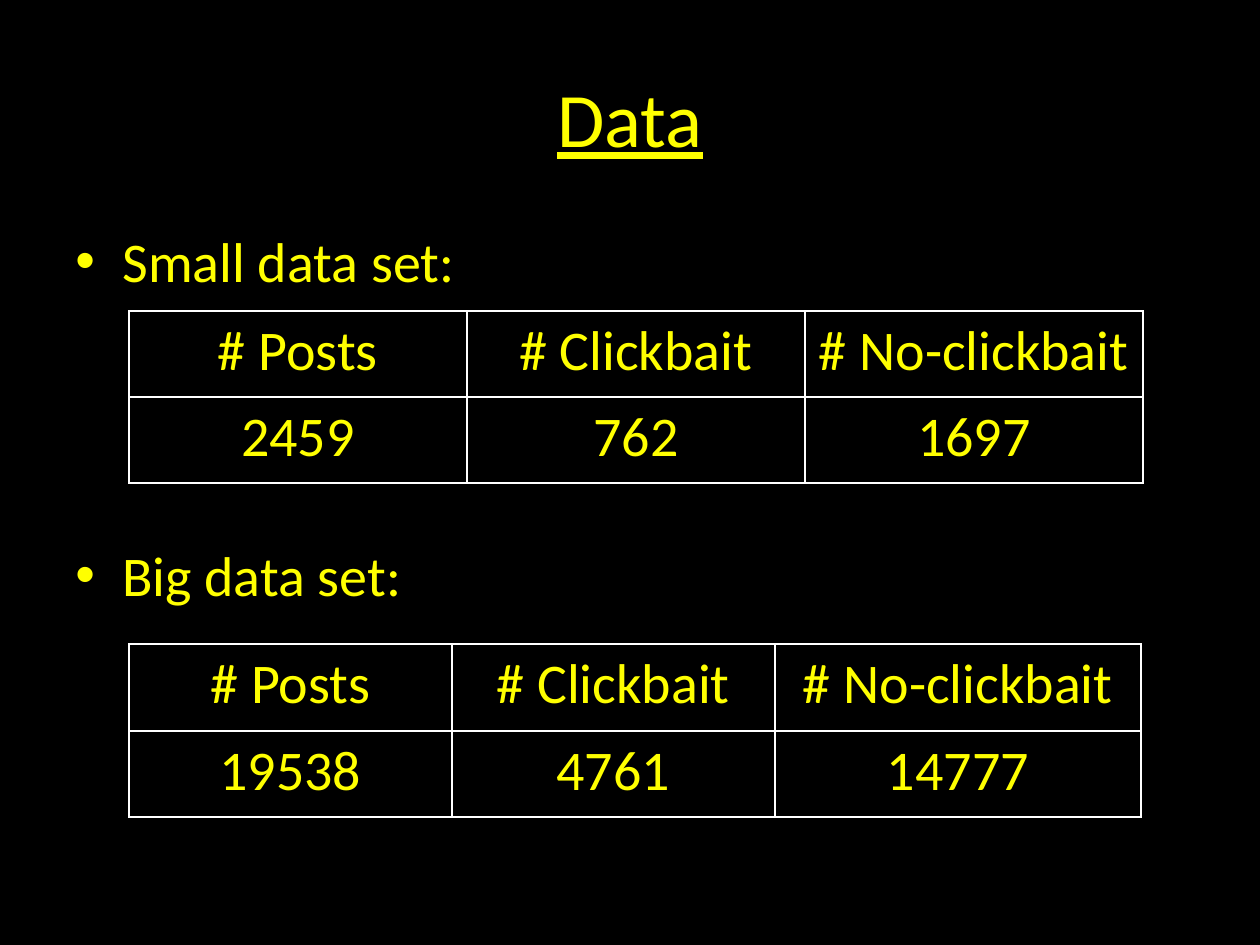
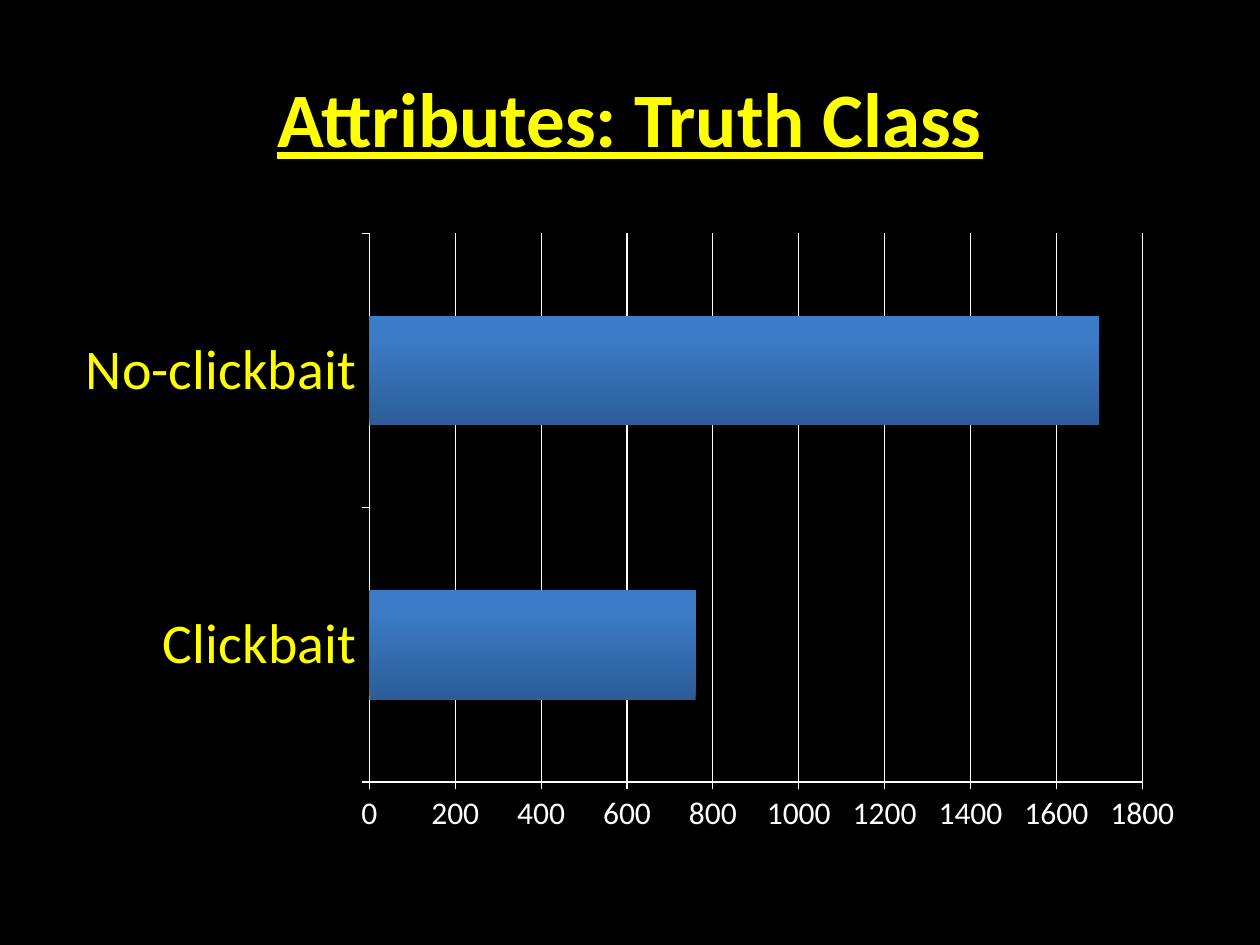
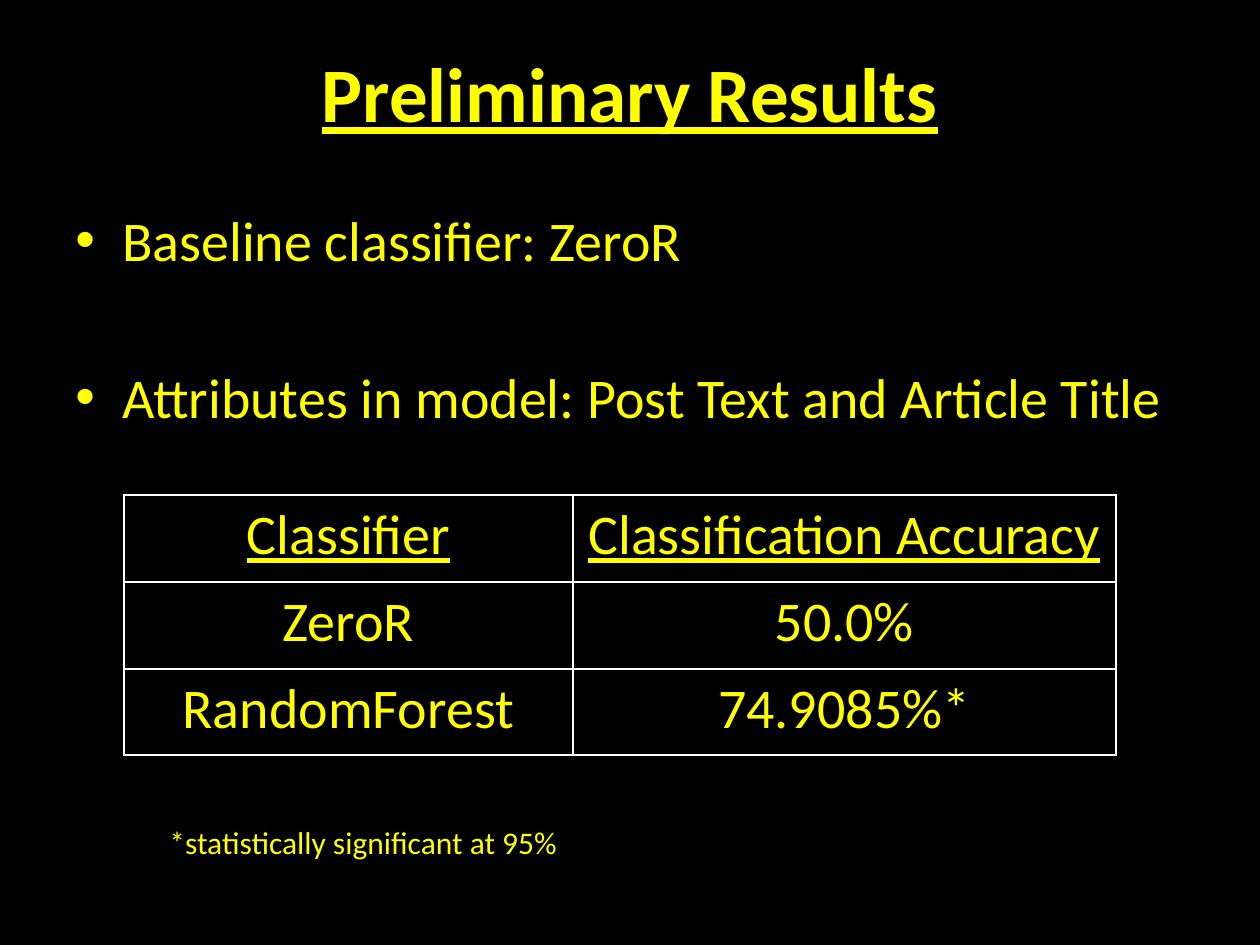
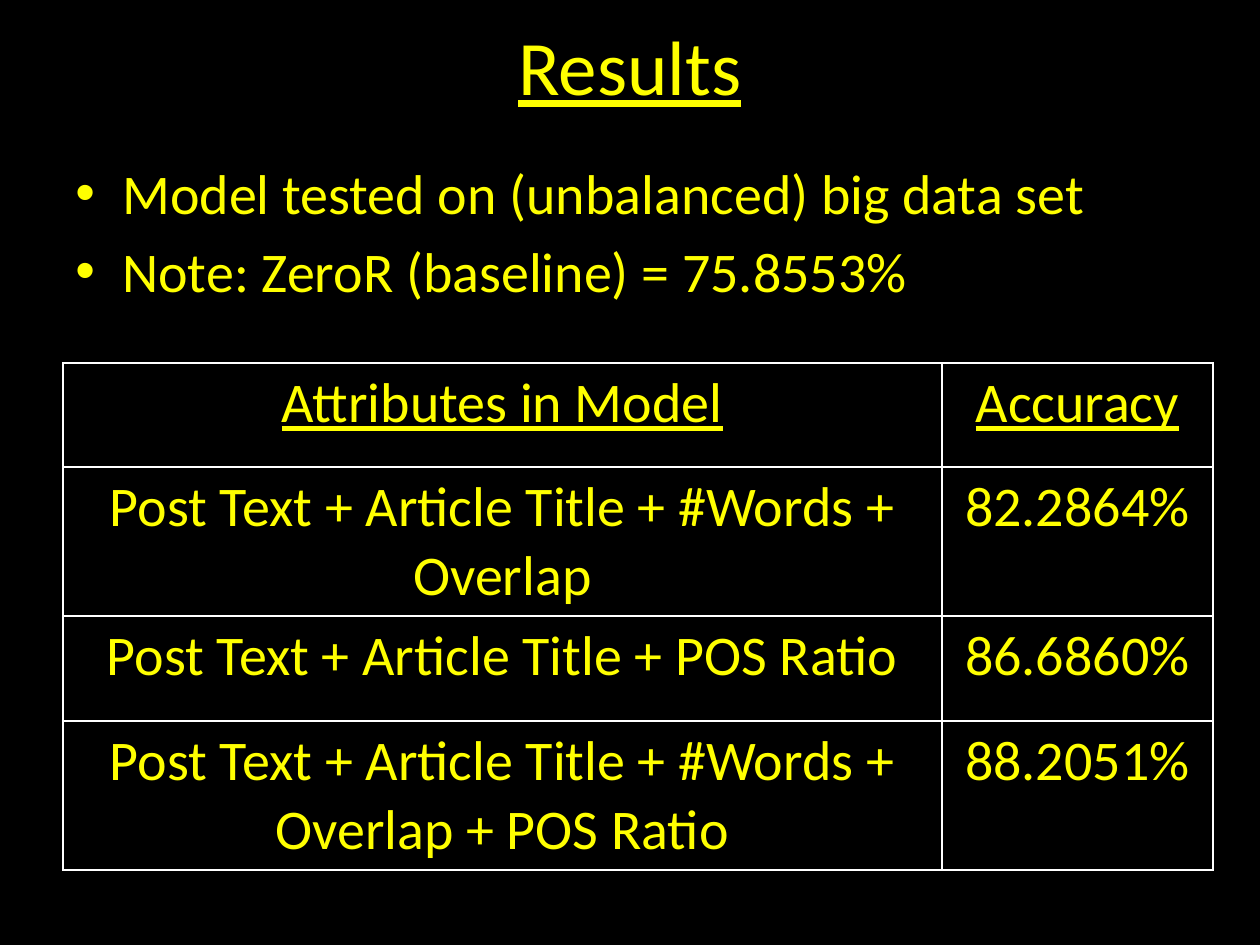
from lxml.etree import SubElement
from pptx import Presentation
from pptx.chart.data import CategoryChartData
from pptx.dml.color import RGBColor
from pptx.enum.chart import XL_CHART_TYPE, XL_TICK_MARK
from pptx.enum.text import MSO_ANCHOR, PP_ALIGN
from pptx.oxml import parse_xml
from pptx.oxml.ns import nsdecls, qn
from pptx.util import Emu, Pt

BLACK = RGBColor(0x00, 0x00, 0x00)
WHITE = RGBColor(0xFF, 0xFF, 0xFF)
YELLOW = RGBColor(0xFF, 0xFF, 0x00)
BAR_DARK = RGBColor(0x2C, 0x5D, 0x98)
BAR_LIGHT = RGBColor(0x3C, 0x7B, 0xC7)

FONT = "Calibri"
TITLE_SIZE, BODY_SIZE, SMALL_SIZE = 44, 32, 18
LEFT, WIDTH = 63, 1134
TITLE_HEIGHT, BODY_HEIGHT = 158, 624
BULLET_INDENT = 47
BULLET_SPACE, LINE_PITCH = 6.4, 45  # points


def px(length):
    """Turn pixels (126 to the inch) into EMU."""
    return Emu(round(length * 914400 / 126))


def px_box(*lengths):
    return [px(length) for length in lengths]


def style(font, size, color=YELLOW, bold=False, underline=False):
    font.name = FONT
    font.size = Pt(size)
    font.color.rgb = color
    font.bold = bold
    font.underline = underline


def add_text(page, box, wrap=True):
    frame = page.shapes.add_textbox(*px_box(*box)).text_frame
    frame.word_wrap = wrap
    return frame


def add_title(page, text, top, bold=False):
    frame = add_text(page, (LEFT, top, WIDTH, TITLE_HEIGHT))
    frame.vertical_anchor = MSO_ANCHOR.MIDDLE
    para = frame.paragraphs[0]
    para.text = text
    para.alignment = PP_ALIGN.CENTER
    style(para.font, TITLE_SIZE, bold=bold, underline=True)


def add_bullets(page, top, texts, skipped_lines=0):
    """Bulleted list that leaves room for skipped lines between its items."""
    frame = add_text(page, (LEFT, top, WIDTH, BODY_HEIGHT))
    for index, text in enumerate(texts):
        para = frame.paragraphs[0] if index == 0 else frame.add_paragraph()
        para.text = text
        gap = LINE_PITCH * skipped_lines if index else 0
        para.space_before = Pt(BULLET_SPACE + gap)
        properties = para._p.get_or_add_pPr()
        properties.set("marL", str(px(BULLET_INDENT)))
        properties.set("indent", str(-px(BULLET_INDENT)))
        SubElement(properties, qn("a:buFont")).set("typeface", "Arial")
        SubElement(properties, qn("a:buChar")).set("char", "•")
        style(para.font, BODY_SIZE)


def add_borders(cell):
    properties = cell._tc.get_or_add_tcPr()
    for index, side in enumerate(("lnL", "lnR", "lnT", "lnB")):
        properties.insert(index, parse_xml(
            f'<a:{side} {nsdecls("a")} w="{Pt(1)}"><a:solidFill>'
            f'<a:srgbClr val="{WHITE}"/></a:solidFill></a:{side}>'))


def add_grid(page, left, top, columns, heights, rows, underlined_header=False):
    """Centred table with white borders and no fill."""
    box = px_box(left, top, sum(columns), sum(heights))
    table = page.shapes.add_table(len(rows), len(columns), *box).table
    table.first_row = table.horz_banding = False
    for column, width in zip(table.columns, columns):
        column.width = px(width)
    for row_index, (row, height) in enumerate(zip(table.rows, heights)):
        row.height = px(height)
        for cell, text in zip(row.cells, rows[row_index]):
            cell.fill.background()
            add_borders(cell)
            cell.text = text
            para = cell.text_frame.paragraphs[0]
            para.alignment = PP_ALIGN.CENTER
            style(para.font, BODY_SIZE,
                  underline=underlined_header and row_index == 0)


def add_class_chart(page, box):
    data = CategoryChartData()
    data.categories = ["Clickbait", "No-clickbait"]
    data.add_series("Series 1", (760, 1700))
    chart = page.shapes.add_chart(
        XL_CHART_TYPE.BAR_STACKED, *px_box(*box), data).chart
    chart.has_title = chart.has_legend = False
    style(chart.font, SMALL_SIZE, WHITE)

    # Bars
    plot = chart.plots[0]
    plot.gap_width, plot.overlap = 150, 100
    plot.vary_by_categories = False
    bars = plot.series[0].format
    bars.line.fill.background()
    bars.fill.gradient()
    bars.fill.gradient_angle = 90
    stops = bars.fill.gradient_stops
    for stop, color, position in zip(stops, (BAR_DARK, BAR_LIGHT), (0, 0.8)):
        stop.color.rgb = color
        stop.position = position

    # Axes
    values = chart.value_axis
    values.minimum_scale, values.maximum_scale, values.major_unit = 0, 1800, 200
    values.has_major_gridlines = True
    for axis in (chart.category_axis, values):
        axis.major_tick_mark = XL_TICK_MARK.OUTSIDE
        axis.minor_tick_mark = XL_TICK_MARK.NONE
    for part in (chart.category_axis, values, values.major_gridlines):
        part.format.line.color.rgb = WHITE
        part.format.line.width = Pt(0.75)
    style(chart.category_axis.tick_labels.font, BODY_SIZE)


def add_footnote(page, text, box):
    para = add_text(page, box, wrap=False).paragraphs[0]
    para.text = text
    style(para.font, SMALL_SIZE)


def build_data(page):
    add_title(page, "Data", 38)
    add_bullets(page, 220, ["Small data set:", "Big data set:"], skipped_lines=3)
    header = ("# Posts", "# Clickbait", "# No-clickbait")
    add_grid(page, 129, 311, [338] * 3, [86] * 2,
             [header, ("2459", "762", "1697")])
    add_grid(page, 129, 644, [323, 323, 366], [87, 86],
             [header, ("19538", "4761", "14777")])


def build_truth_class(page):
    add_title(page, "Attributes: Truth Class", 38, bold=True)
    add_class_chart(page, (LEFT, 221, WIDTH, BODY_HEIGHT))


def build_preliminary_results(page):
    add_title(page, "Preliminary Results", 13, bold=True)
    add_bullets(page, 199, ["Baseline classifier: ZeroR",
                            "Attributes in model: Post Text and Article Title"],
                skipped_lines=1)
    add_grid(page, 124, 495, [449, 543], [87, 87, 86],
             [("Classifier", "Classification Accuracy"),
              ("ZeroR", "50.0%"),
              ("RandomForest", "74.9085%*")], underlined_header=True)
    add_footnote(page, "*statistically significant at 95%", (157, 817, 420, 50))


def build_results(page):
    add_title(page, "Results", -14)
    add_bullets(page, 152, ["Model tested on (unbalanced) big data set",
                            "Note: ZeroR (baseline) = 75.8553%"])
    add_grid(page, LEFT, 363, [879, 271], [104, 149, 105, 149],
             [("Attributes in Model", "Accuracy"),
              ("Post Text + Article Title + #Words + Overlap", "82.2864%"),
              ("Post Text + Article Title + POS Ratio", "86.6860%"),
              ("Post Text + Article Title + #Words + Overlap + POS Ratio",
               "88.2051%")], underlined_header=True)


def main():
    deck = Presentation()
    deck.slide_width, deck.slide_height = px_box(1260, 945)
    background = deck.slide_master.background.fill
    background.solid()
    background.fore_color.rgb = BLACK
    for build in (build_data, build_truth_class,
                  build_preliminary_results, build_results):
        build(deck.slides.add_slide(deck.slide_layouts[6]))
    deck.save("out.pptx")


if __name__ == "__main__":
    main()
